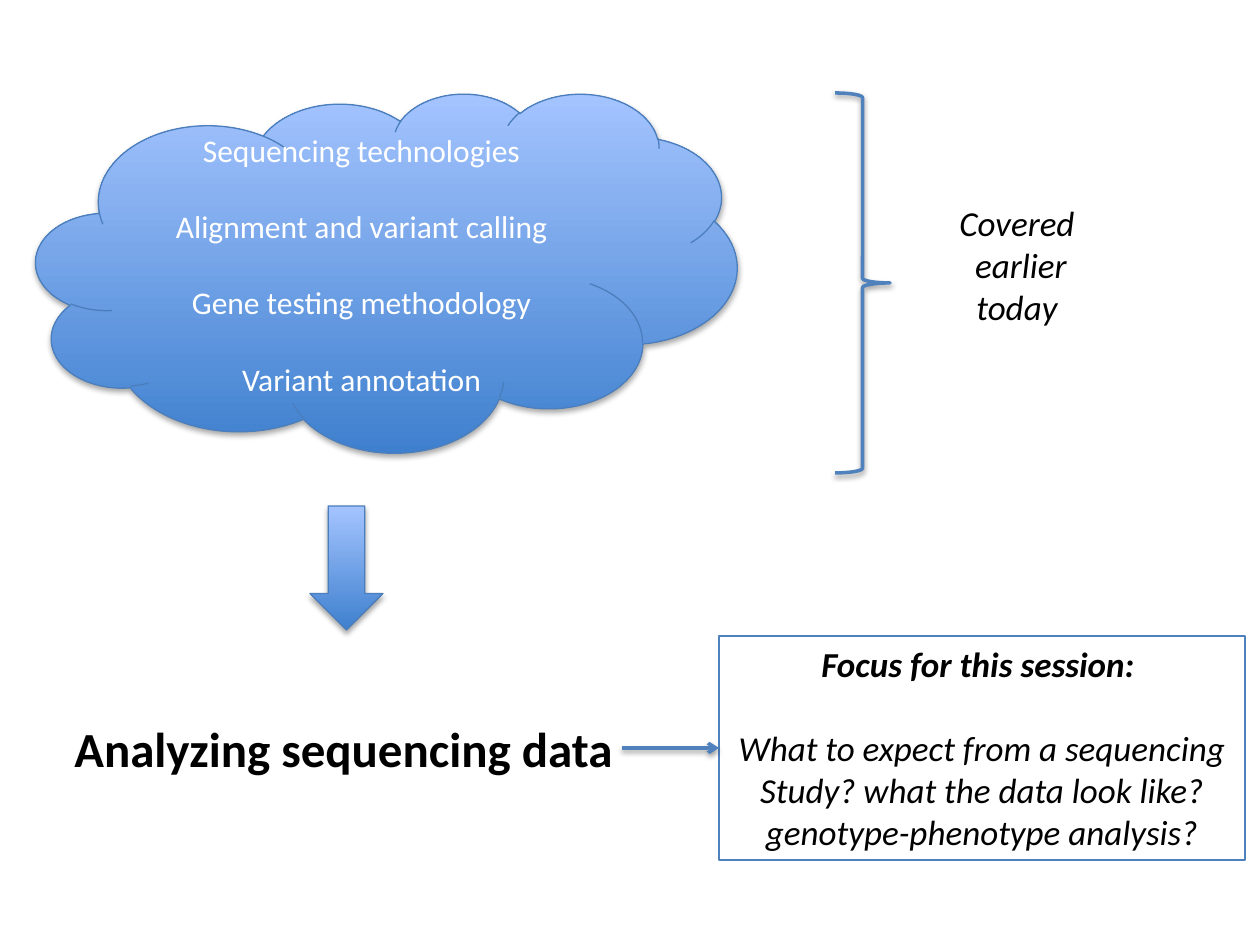
from lxml import etree
from pptx import Presentation
from pptx.dml.color import RGBColor
from pptx.enum.shapes import MSO_CONNECTOR, MSO_SHAPE
from pptx.enum.text import MSO_ANCHOR, PP_ALIGN
from pptx.oxml.ns import qn
from pptx.util import Pt

CLOUD, ARROW = MSO_SHAPE.CLOUD, MSO_SHAPE.DOWN_ARROW
BRACE, RECTANGLE = MSO_SHAPE.RIGHT_BRACE, MSO_SHAPE.RECTANGLE
STRAIGHT = MSO_CONNECTOR.STRAIGHT
CENTER, TOP, MIDDLE = PP_ALIGN.CENTER, MSO_ANCHOR.TOP, MSO_ANCHOR.MIDDLE
LEFT_SIDE = 1
EMU_PER_PX = 914400 / 126
LINE_HEIGHT = 1.22  # of the font size, for Calibri

BLUE, EDGE, GRADIENT = "4F81BD", "4B7EBC", ("3F80CE", "A4C4FF")
SOLID_SHADOW = {"alpha": 35, "distance": 1.8}
LINE_SHADOW = {"alpha": 38, "distance": 1.6}

TOPICS = ["Sequencing technologies", "Alignment and variant calling",
          "Gene testing methodology", "Variant annotation"]
COVERED = ["Covered ", "earlier", "today "]
RESULT = ["Analyzing sequencing data"]
FOCUS_TITLE = "Focus for this session: "
FOCUS = ["What to expect from a sequencing", "Study? what the data look like?",
         "genotype-phenotype analysis?"]

TOPIC_FONT = {"size": Pt(18), "name": "Calibri"}
NOTE_FONT = {"size": Pt(20), "name": "Calibri", "italic": True}
RESULT_FONT = {"size": Pt(28), "name": "Calibri", "bold": True}

# left, top, width, height in px
CLOUD_AT = (36, 93, 701, 359)
ARROW_AT = (310, 506, 73, 124)
RESULT_AT = (58, 712, 571, 72)
BRACE_AT = (835, 93, 55, 380)
COVERED_AT = (946, 195, 150, 224)
FOCUS_AT = (719, 636, 526, 224)
POINTER_START = 622


def px(*lengths):
    return [round(length * EMU_PER_PX) for length in lengths]


def color(hex_code):
    return RGBColor.from_string(hex_code)


def set_line(shape, hex_code, width):
    shape.line.color.rgb = color(hex_code)
    shape.line.width = Pt(width)


def add_shadow(effects, alpha, distance):
    shadow = etree.SubElement(effects, qn("a:outerShdw"), {
        "blurRad": str(Pt(3.1)), "dist": str(Pt(distance)),
        "dir": "5400000", "rotWithShape": "0"})
    tint = etree.SubElement(shadow, qn("a:srgbClr"), val="000000")
    etree.SubElement(tint, qn("a:alpha"), val=str(alpha * 1000))


def add_outline(page, kind, at, hex_code, width, shadow=None):
    shape = page.shapes.add_shape(kind, *px(*at))
    shape.fill.background()
    set_line(shape, hex_code, width)
    shape.shadow.inherit = False
    if shadow:
        add_shadow(shape._element.spPr.find(qn("a:effectLst")), **shadow)
    return shape


def add_solid(page, kind, at):
    shape = add_outline(page, kind, at, EDGE, 0.75, SOLID_SHADOW)
    shape.fill.gradient()
    shape.fill.gradient_angle = 90
    for stop, hex_code in zip(shape.fill.gradient_stops, GRADIENT):
        stop.color.rgb = color(hex_code)
    return shape


def write(box, lines, font, hex_code="000000", anchor=TOP, wrap=False):
    """Write one centred paragraph per line and return the paragraphs."""
    frame = box.text_frame
    frame.word_wrap = wrap
    frame.vertical_anchor = anchor
    frame.text = "\n".join(lines)
    for para in frame.paragraphs:
        para.alignment = CENTER
        for span in para.runs:
            for name, value in font.items():
                setattr(span.font, name, value)
            span.font.color.rgb = color(hex_code)
    return frame.paragraphs


def leave_line_after(para):
    para.space_after = Pt(round(para.runs[0].font.size.pt * LINE_HEIGHT, 1))


def add_label(page, at, lines, font):
    write(page.shapes.add_textbox(*px(*at)), lines, font)


def add_pointer(page, start, target):
    """Draw a level arrow from start to the left side of target."""
    middle = target.top + target.height // 2
    pointer = page.shapes.add_connector(
        STRAIGHT, px(start)[0], middle, target.left, middle)
    pointer.end_connect(target, LEFT_SIDE)
    set_line(pointer, BLUE, 2)
    etree.SubElement(pointer.line._get_or_add_ln(), qn("a:tailEnd"), type="arrow")
    effects = etree.SubElement(pointer._element.spPr, qn("a:effectLst"))
    add_shadow(effects, **LINE_SHADOW)


def main():
    deck = Presentation()
    deck.slide_width, deck.slide_height = px(1260, 945)
    page = deck.slides.add_slide(deck.slide_layouts[6])

    cloud = add_solid(page, CLOUD, CLOUD_AT)
    topics = write(cloud, TOPICS, TOPIC_FONT, "FFFFFF", MIDDLE, wrap=True)
    for para in topics[:-1]:
        leave_line_after(para)

    add_solid(page, ARROW, ARROW_AT)
    add_label(page, RESULT_AT, RESULT, RESULT_FONT)
    add_outline(page, BRACE, BRACE_AT, BLUE, 2, LINE_SHADOW)
    add_label(page, COVERED_AT, COVERED, NOTE_FONT)

    focus = add_outline(page, RECTANGLE, FOCUS_AT, BLUE, 0.75)
    title = write(focus, [FOCUS_TITLE, *FOCUS], NOTE_FONT)[0]
    title.runs[0].font.bold = True
    leave_line_after(title)
    add_pointer(page, POINTER_START, focus)

    deck.save("out.pptx")


if __name__ == "__main__":
    main()
